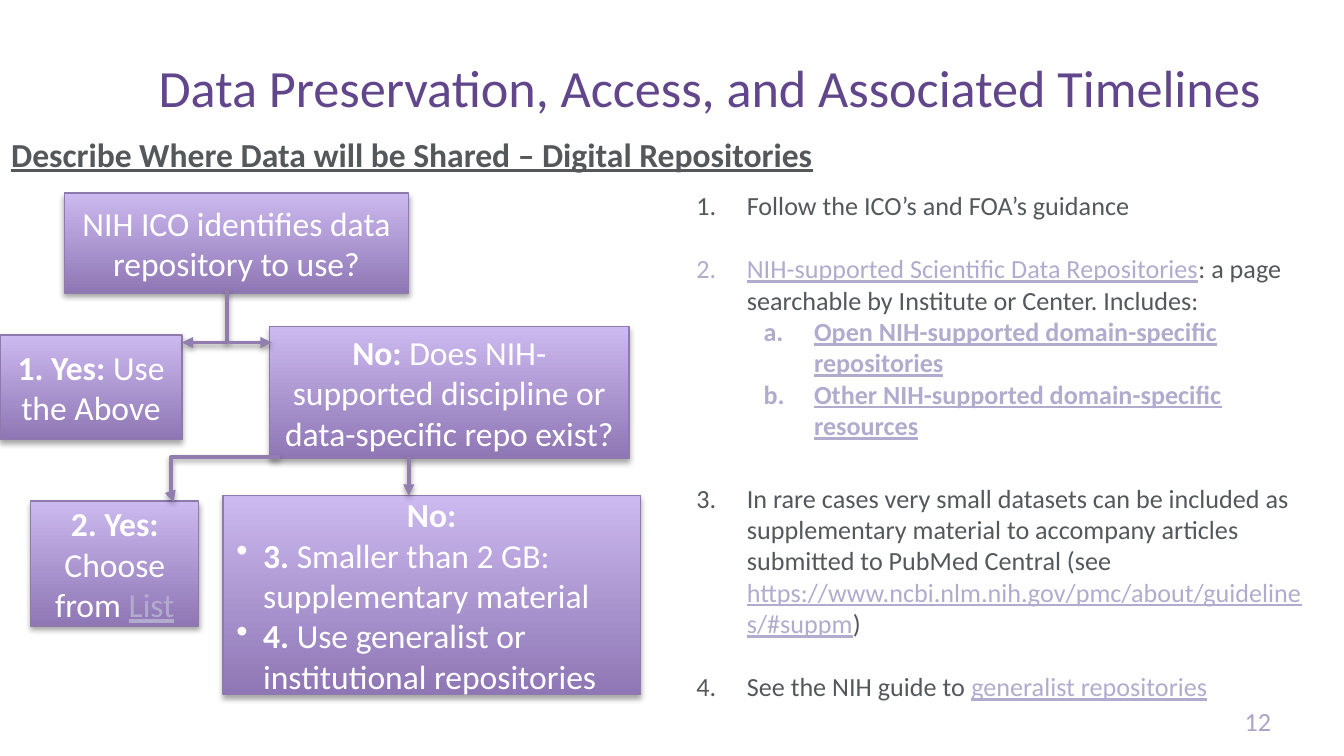
from lxml import etree
from pptx import Presentation
from pptx.dml.color import RGBColor
from pptx.enum.shapes import MSO_CONNECTOR, MSO_SHAPE
from pptx.enum.text import MSO_ANCHOR, PP_ALIGN
from pptx.oxml import parse_xml
from pptx.oxml.ns import nsdecls, qn
from pptx.util import Pt

RECT = MSO_SHAPE.RECTANGLE
FLOW = MSO_SHAPE.FLOWCHART_PROCESS
LINE = MSO_CONNECTOR.STRAIGHT
BENT = MSO_CONNECTOR.ELBOW
TOP, MID, LOW = MSO_ANCHOR.TOP, MSO_ANCHOR.MIDDLE, MSO_ANCHOR.BOTTOM
LEFT, MIDST, RIGHT = PP_ALIGN.LEFT, PP_ALIGN.CENTER, PP_ALIGN.RIGHT

FONT = "Calibri"
PLUM = RGBColor(0x61, 0x46, 0x8B)
GRAY = RGBColor(0x54, 0x58, 0x5A)
WHITE = RGBColor(0xFF, 0xFF, 0xFF)
LINK = RGBColor(0xB1, 0xAC, 0xCE)
PAGE = RGBColor(0xB0, 0xA2, 0xC5)
DARK = RGBColor(0x8F, 0x77, 0xB5)
LIGHT = RGBColor(0xCC, 0xB9, 0xEF)
EDGE = RGBColor(0x8E, 0x7A, 0xAB)
ARROW = RGBColor(0x91, 0x7E, 0xAE)


def put(para, text, size=18, color=WHITE, bold=False, under=False):
    run = para.add_run()
    run.text = text
    font = run.font
    font.name, font.size = FONT, Pt(size)
    font.bold, font.underline = bold, under
    font.color.rgb = color


def mark(para, tag, key, value, left, hang):
    props = para._p.get_or_add_pPr()
    props.set("marL", str(Pt(left)))
    props.set("indent", str(-Pt(hang)))
    etree.SubElement(props, qn(tag)).set(key, value)


def shade(shape, alpha, drop):
    shape._element.spPr.append(parse_xml(
        f'<a:effectLst {nsdecls("a")}>'
        f'<a:outerShdw blurRad="{Pt(3.1)}" dist="{Pt(drop)}" dir="5400000" rotWithShape="0">'
        f'<a:srgbClr val="000000"><a:alpha val="{alpha * 1000}"/></a:srgbClr>'
        '</a:outerShdw></a:effectLst>'))


def label(slide, x, y, w, h, anchor=TOP, pads=(0, 0, 7.2, 3.6), align=LEFT, wrap=True):
    frame = slide.shapes.add_textbox(Pt(x), Pt(y), Pt(w), Pt(h)).text_frame
    frame.word_wrap = wrap
    frame.vertical_anchor = anchor
    frame.margin_left, frame.margin_top, frame.margin_right, frame.margin_bottom = map(Pt, pads)
    para = frame.paragraphs[0]
    para.alignment = align
    return para


def box(slide, kind, x, y, w, h, head, tail=""):
    shape = slide.shapes.add_shape(kind, Pt(x), Pt(y), Pt(w), Pt(h))
    shape.fill.gradient()
    shape.fill.gradient_angle = 90
    for stop, color in zip(shape.fill.gradient_stops, (DARK, LIGHT)):
        stop.color.rgb = color
    shape.line.color.rgb = EDGE
    shape.line.width = Pt(0.75)
    shade(shape, 35, 1.8)
    frame = shape.text_frame
    frame.word_wrap = True
    frame.vertical_anchor = MID
    para = frame.paragraphs[0]
    para.alignment = MIDST
    if head:
        put(para, head, bold=True)
    if tail:
        put(para, tail)
    return frame


def link(slide, x1, y1, x2, y2, kind=LINE, tip=True):
    wire = slide.shapes.add_connector(kind, Pt(x1), Pt(y1), Pt(x2), Pt(y2))
    wire.line.color.rgb = ARROW
    wire.line.width = Pt(2)
    if tip:
        etree.SubElement(wire.line._get_or_add_ln(), qn("a:tailEnd")).set("type", "triangle")
    shade(wire, 38, 1.6)
    return wire


def flow(slide):
    box(slide, FLOW, 34.5, 103.5, 184.5, 53.5, "", "NIH ICO identifies data repository to use?")
    box(slide, RECT, 0, 179.5, 97.5, 56, "1. Yes: ", "Use the Above")
    box(slide, RECT, 144.5, 175, 192.5, 70.5, "No: ",
        "Does NIH-supported discipline or data-specific repo exist?")
    pick = box(slide, RECT, 16.5, 268.5, 90, 67, "2. Yes: ", "Choose from ")
    put(pick.paragraphs[0], "List", color=LINK, under=True)
    rest = box(slide, RECT, 119.5, 265.5, 223.5, 106.5, "No:")
    for num, text in (("3. ", "Smaller than 2 GB: supplementary material"),
                      ("4. ", "Use generalist or institutional repositories")):
        para = rest.add_paragraph()
        para.alignment = LEFT
        mark(para, "a:buChar", "char", "•", 14.4, 14.4)
        put(para, num, bold=True)
        put(para, text)

    link(slide, 121.5, 155.5, 121.5, 183.5, tip=False)
    for x in (97.5, 145.5):
        link(slide, 121.5, 183.5, x, 183.5)


def steps(slide):
    plain = {"size": 14, "color": GRAY}
    url = {"size": 14, "color": LINK, "under": True}
    sub = {**url, "bold": True}
    items = [
        (0, 0, [("Follow the ICO’s and FOA’s guidance", plain)]),
        (0, 17, [("NIH-supported Scientific Data Repositories", url),
                 (": a page searchable by Institute or Center. Includes:", plain)]),
        (1, 0, [("Open NIH-supported domain-specific repositories", sub)]),
        (1, 0, [("Other NIH-supported domain-specific resources", sub)]),
        (0, 22, [("In rare cases very small datasets can be included as supplementary "
                  "material to accompany articles submitted to PubMed Central (see ", plain),
                 ("https://www.ncbi.nlm.nih.gov/pmc/about/guidelines/#suppm", url),
                 (")", plain)]),
        (0, 17, [("See the NIH guide to ", plain), ("generalist repositories", url)]),
    ]
    para = label(slide, 366, 98, 343.5, 283.5, pads=(7.2, 3.6, 7.2, 3.6))
    frame = para._parent
    for i, (level, gap, runs) in enumerate(items):
        if i:
            para = frame.add_paragraph()
        para.level = level
        style = "alphaLcPeriod" if level else "arabicPeriod"
        mark(para, "a:buAutoNum", "type", style, 27 + 36 * level, 27)
        para.space_before = Pt(gap)
        for text, look in runs:
            put(para, text, **look)


def main():
    deck = Presentation()
    deck.slide_width, deck.slide_height = Pt(720), Pt(405)
    slide = deck.slides.add_slide(deck.slide_layouts[6])

    title = label(slide, 85, 31, 610, 36, LOW)
    title.line_spacing = 0.9
    put(title, "Data Preservation, Access, and Associated Timelines", 28, PLUM)
    put(label(slide, 6, 71.5, 440, 24),
        "Describe Where Data will be Shared – Digital Repositories",
        color=GRAY, bold=True, under=True)

    flow(slide)
    steps(slide)
    put(label(slide, 653.5, 376.5, 27.5, 18, LOW, (0, 0, 0, 0), RIGHT, False), "12", 14, PAGE)

    elbow = link(slide, 150, 245, 93, 269, BENT)
    guide = etree.SubElement(elbow._element.spPr.find(".//" + qn("a:avLst")), qn("a:gd"))
    guide.set("name", "adj1")
    guide.set("fmla", "val 102500")
    link(slide, 219, 245, 219, 265.5)
    deck.save("out.pptx")


if __name__ == "__main__":
    main()
